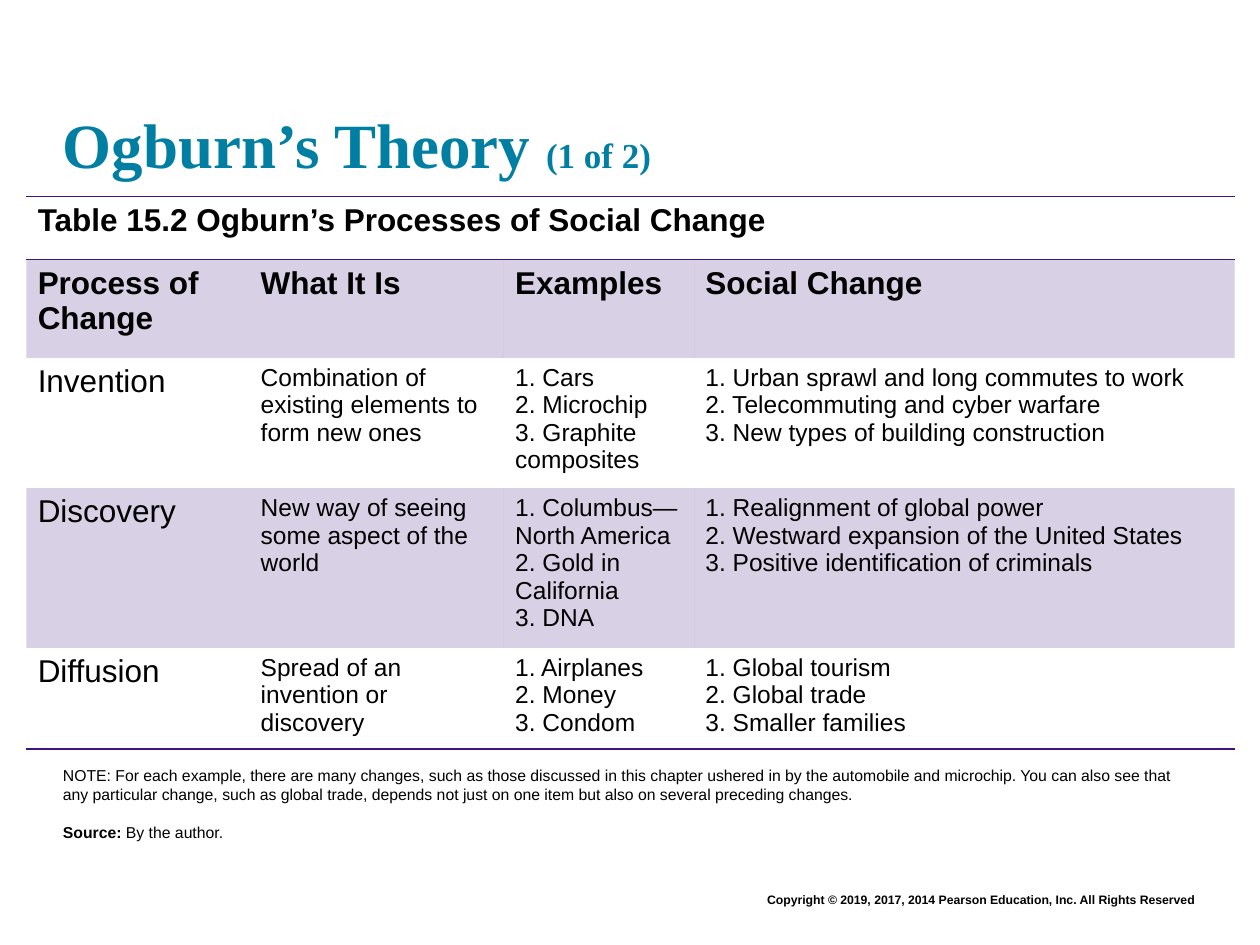
from lxml import etree
from pptx import Presentation
from pptx.dml.color import RGBColor
from pptx.enum.text import MSO_ANCHOR, PP_ALIGN
from pptx.oxml.ns import qn
from pptx.util import Inches, Pt

BOTTOM = MSO_ANCHOR.BOTTOM
RIGHT = PP_ALIGN.RIGHT
COLORS = {"title": "007FA3", "text": "000000", "purple": "3C1581"}
NO_GRID_STYLE = "{2D5ABB26-0587-4C30-8999-92F81FD0307C}"


def add_run(paragraph, text, size, bold=False, color="text", font="Arial"):
    run = paragraph.add_run()
    run.text = text
    run.font.size = Pt(size)
    run.font.bold = bold
    run.font.name = font
    run.font.color.rgb = RGBColor.from_string(COLORS[color])


def add_text_frame(left, top, width, height, margin=0):
    frame = slide.shapes.add_textbox(
        Inches(left), Inches(top), Inches(width), Inches(height)).text_frame
    frame.word_wrap = True
    frame.margin_left = frame.margin_right = Inches(margin)
    frame.margin_top = frame.margin_bottom = Inches(margin / 2)
    return frame


presentation = Presentation()
presentation.slide_width = Inches(10)
presentation.slide_height = Inches(7.5)
slide = presentation.slides.add_slide(presentation.slide_layouts[6])

# Copyright line
paragraph = add_text_frame(1.75, 7.03, 7.83, 0.22, margin=0.1).paragraphs[0]
paragraph.alignment = RIGHT
add_run(paragraph, "Copyright © 2019, 2017, 2014 Pearson Education, Inc. All Rights Reserved",
        7, bold=True)

# Title
frame = add_text_frame(0.5, 0.24, 9, 1.2)
frame.vertical_anchor = BOTTOM
for text, size in (("Ogburn’s Theory ", 36), ("(1 of 2)", 20)):
    add_run(frame.paragraphs[0], text, size, True, "title", "Times New Roman")

# Table content: each cell is a list of paragraphs
rows = [
    [["Table 15.2 Ogburn’s Processes of Social Change"]],
    [["Process of Change"], ["What It Is"], ["Examples"], ["Social Change"]],
    [["Invention"],
     ["Combination of existing elements to form new ones"],
     ["1. Cars", "2. Microchip", "3. Graphite composites"],
     ["1. Urban sprawl and long commutes to work",
      "2. Telecommuting and cyber warfare",
      "3. New types of building construction"]],
    [["Discovery"],
     ["New way of seeing some aspect of the world"],
     ["1. Columbus—North America", "2. Gold in California", "3. DNA"],
     ["1. Realignment of global power",
      "2. Westward expansion of the United States",
      "3. Positive identification of criminals"]],
    [["Diffusion"],
     ["Spread of an invention or", "discovery"],
     ["1. Airplanes", "2. Money", "3. Condom"],
     ["1. Global tourism", "2. Global trade", "3. Smaller families"]],
]
column_widths = [1.77, 2.02, 1.51, 4.29]
row_heights = [0.5, 0.78, 0.95, 0.95, 0.55]
shaded_rows = (1, 3)
row_borders = {0: ("a:lnT", "a:lnB"), 4: ("a:lnB",)}

# Table frame
table = slide.shapes.add_table(
    len(rows), len(column_widths), Inches(0.21), Inches(1.56),
    Inches(sum(column_widths)), Inches(sum(row_heights))).table
table.first_row = False
table.horz_banding = False
table._tbl.tblPr.find(qn("a:tableStyleId")).text = NO_GRID_STYLE
for column, width in zip(table.columns, column_widths):
    column.width = Inches(width)
for row, height in zip(table.rows, row_heights):
    row.height = Inches(height)
table.cell(0, 0).merge(table.cell(0, len(column_widths) - 1))

# Cell fills, rules and text
for row_index, row in enumerate(rows):
    for column_index in range(len(column_widths)):
        cell = table.cell(row_index, column_index)
        cell.margin_left = cell.margin_right = Inches(0.09)
        cell.margin_top = cell.margin_bottom = Inches(0.05)
        properties = cell._tc.get_or_add_tcPr()

        if row_index in shaded_rows:
            cell.fill.solid()
            cell.fill.fore_color.rgb = RGBColor.from_string(COLORS["purple"])
            fill_color = properties.find(".//" + qn("a:srgbClr"))
            etree.SubElement(fill_color, qn("a:alpha"), val="20000")
        else:
            cell.fill.background()

        for position, tag in enumerate(row_borders.get(row_index, ())):
            line = etree.Element(qn(tag), w=str(Pt(1)))
            line_fill = etree.SubElement(line, qn("a:solidFill"))
            etree.SubElement(line_fill, qn("a:srgbClr"), val=COLORS["purple"])
            properties.insert(position, line)

        if column_index < len(row):
            frame = cell.text_frame
            size = 18 if row_index < 2 or column_index == 0 else 14
            for index, text in enumerate(row[column_index]):
                paragraph = frame.add_paragraph() if index else frame.paragraphs[0]
                add_run(paragraph, text, size, bold=row_index < 2)

# Note and source
frame = add_text_frame(0.5, 6.08, 9, 0.76)
add_run(frame.paragraphs[0],
        "NOTE: For each example, there are many changes, such as those discussed in this "
        "chapter ushered in by the automobile and microchip. You can also see that any "
        "particular change, such as global trade, depends not just on one item but also "
        "on several preceding changes.", 9)
paragraph = frame.add_paragraph()
paragraph.space_before = Pt(10.5)
add_run(paragraph, "Source:", 9, bold=True)
add_run(paragraph, " By the author.", 9)

presentation.save("out.pptx")
